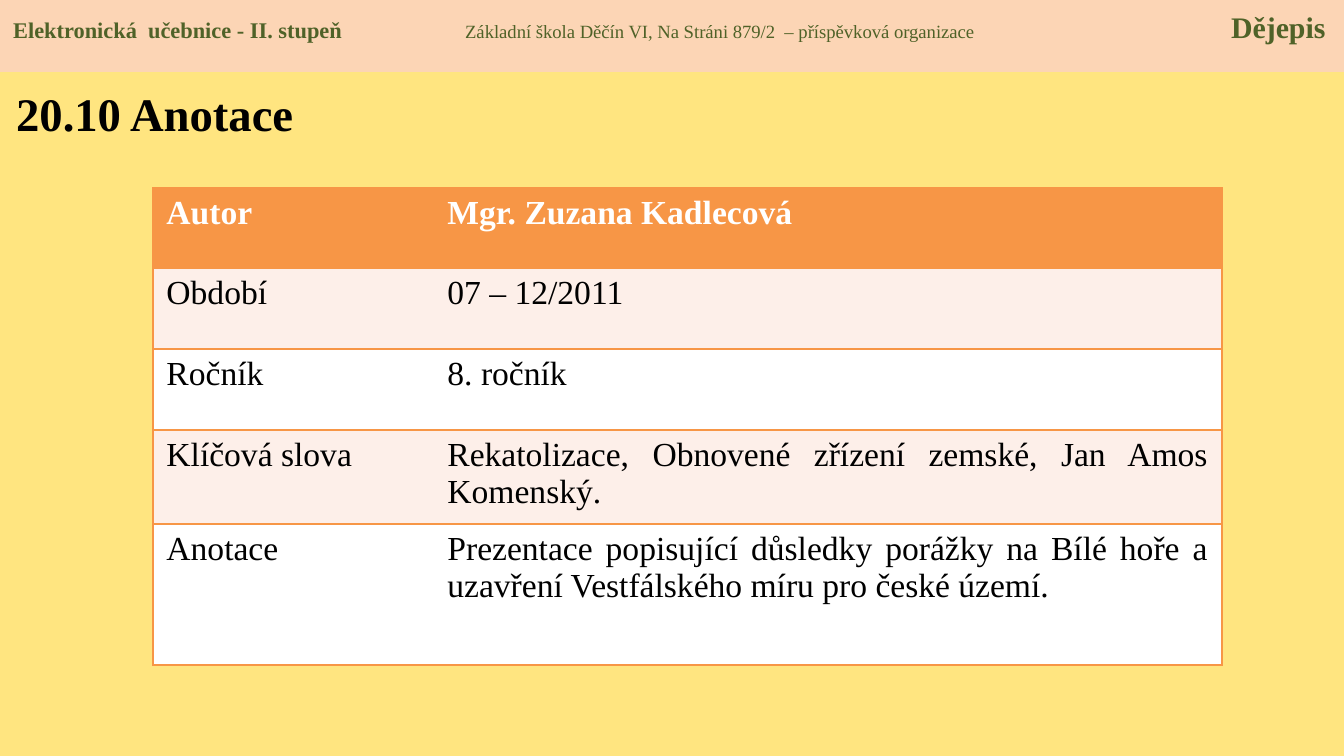
from dataclasses import dataclass

from lxml import etree
from pptx import Presentation
from pptx import util as u
from pptx.dml.color import RGBColor
from pptx.enum import shapes, text
from pptx.oxml import ns

WIDTH, HEIGHT = 1344, 756
EMU_PER_PX = u.Inches(10) / WIDTH


def px(length):
    return u.Emu(round(length * EMU_PER_PX))


@dataclass(frozen=True)
class Theme:
    font: str = "Times New Roman"
    background: str = "FFE580"
    band: str = "FCD5B5"
    band_text: str = "4F6228"
    ink: str = "000000"
    white: str = "FFFFFF"
    accent: str = "F79646"
    stripe: str = "FDEFE9"
    title_size: int = 25
    table_size: int = 18
    series_size: int = 12
    school_size: int = 10
    subject_size: int = 16


class SlideBuilder:
    BARE_TABLE_STYLE = "{2D5ABB26-0587-4C30-8999-92F81FD0307C}"

    def __init__(self, presentation, theme):
        self.theme = theme
        self.slide = presentation.slides.add_slide(presentation.slide_layouts[6])
        fill = self.slide.background.fill
        fill.solid()
        fill.fore_color.rgb = RGBColor.from_string(theme.background)

    def style_run(self, run, size, color, bold=False):
        run.font.name = self.theme.font
        run.font.size = u.Pt(size)
        run.font.bold = bold
        run.font.color.rgb = RGBColor.from_string(color)

    def header(self, left, top, width, height, parts, tab_stops):
        """Draw the top band; parts are (wording, size, bold), split by tabs."""
        band = self.slide.shapes.add_shape(
            shapes.MSO_SHAPE.RECTANGLE, px(left), px(top), px(width), px(height))
        band.shadow.inherit = False
        band.fill.solid()
        band.fill.fore_color.rgb = RGBColor.from_string(self.theme.band)
        band.line.fill.background()
        frame = band.text_frame
        frame.vertical_anchor = text.MSO_ANCHOR.TOP
        frame.margin_top = px(9)
        line = frame.paragraphs[0]
        line.alignment = text.PP_ALIGN.LEFT
        tabs = etree.SubElement(line._p.get_or_add_pPr(), ns.qn("a:tabLst"))
        for stop in tab_stops:
            etree.SubElement(tabs, ns.qn("a:tab"), pos=str(px(stop)), algn="l")
        for index, (wording, size, bold) in enumerate(parts):
            run = line.add_run()
            run.text = "\t" + wording if index else wording
            self.style_run(run, size, self.theme.band_text, bold)

    def title(self, left, top, width, height, wording):
        box = self.slide.shapes.add_textbox(px(left), px(top), px(width), px(height))
        frame = box.text_frame
        frame.word_wrap = True
        frame.margin_top = px(11)
        frame.text = wording
        self.style_run(frame.paragraphs[0].runs[0], self.theme.title_size,
                       self.theme.ink, bold=True)

    def border(self, cell, sides):
        """Rule the given sides, named in schema order: L, R, T, B."""
        properties = cell._tc.get_or_add_tcPr()
        for position, side in enumerate(sides):
            line = etree.Element(ns.qn(f"a:ln{side}"), w=str(u.Pt(1)))
            solid = etree.SubElement(line, ns.qn("a:solidFill"))
            etree.SubElement(solid, ns.qn("a:srgbClr"), val=self.theme.accent)
            properties.insert(position, line)

    def table(self, left, top, columns, heights, rows):
        theme = self.theme
        frame = self.slide.shapes.add_table(
            len(rows), len(columns), px(left), px(top), px(sum(columns)), px(sum(heights)))
        grid = frame.table
        grid._tbl.tblPr.find(ns.qn("a:tableStyleId")).text = self.BARE_TABLE_STYLE
        for column, width in zip(grid.columns, columns):
            column.width = px(width)
        for r, (label_and_value, height) in enumerate(zip(rows, heights)):
            grid.rows[r].height = px(height)
            heading = r == 0
            fill = theme.accent if heading else theme.stripe if r % 2 else theme.white
            for c, wording in enumerate(label_and_value):
                cell = grid.cell(r, c)
                cell.fill.solid()
                cell.fill.fore_color.rgb = RGBColor.from_string(fill)
                self.border(cell, "RTB" if c else "LTB")
                cell.text_frame.text = wording
                line = cell.text_frame.paragraphs[0]
                if c and not heading:
                    line.alignment = text.PP_ALIGN.JUSTIFY
                self.style_run(line.runs[0], theme.table_size,
                               theme.white if heading else theme.ink, heading)


def main():
    presentation = Presentation()
    presentation.slide_width, presentation.slide_height = px(WIDTH), px(HEIGHT)
    theme = Theme()
    page = SlideBuilder(presentation, theme)
    page.header(0, 0, WIDTH, 72, [
        ("Elektronická  učebnice - II. stupeň", theme.series_size, True),
        ("Základní škola Děčín VI, Na Stráni 879/2  – příspěvková organizace",
         theme.school_size, False),
        ("Dějepis", theme.subject_size, True),
    ], tab_stops=[452, 1218])
    page.title(3, 74, 563, 87, "20.10 Anotace")
    page.table(153, 188, [281, 788], [80, 81, 81, 94, 141], [
        ("Autor", "Mgr. Zuzana Kadlecová"),
        ("Období", "07 – 12/2011"),
        ("Ročník", "8. ročník"),
        ("Klíčová slova", "Rekatolizace, Obnovené zřízení zemské, Jan Amos Komenský."),
        ("Anotace", "Prezentace popisující důsledky porážky na Bílé hoře a "
                    "uzavření Vestfálského míru pro české území."),
    ])
    presentation.save("out.pptx")


if __name__ == "__main__":
    main()
